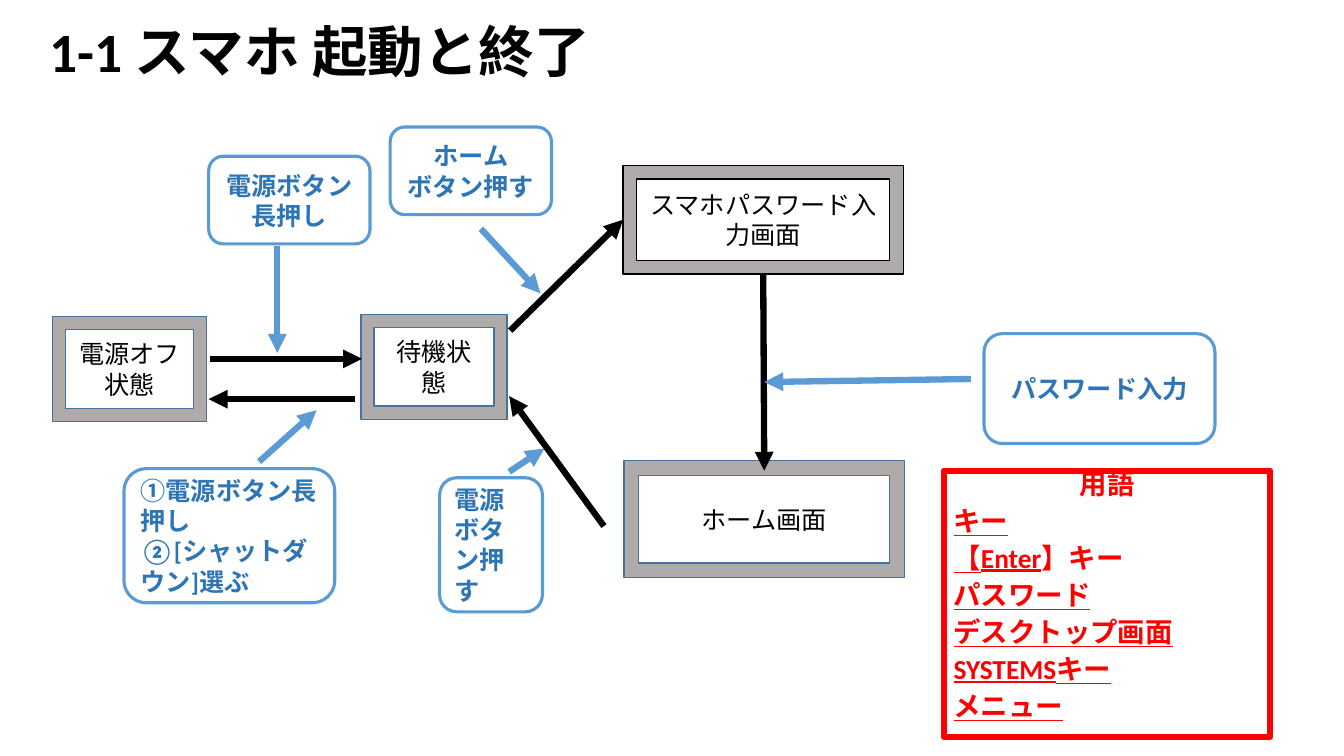
from lxml import etree
from pptx import Presentation
from pptx import util as u
from pptx.dml.color import RGBColor
from pptx.enum import shapes, text
from pptx.oxml.ns import qn

COLORS = {"black": "000000", "white": "FFFFFF", "gray": "AFABAB", "navy": "43739E",
          "blue": "5B9BD5", "label": "2E75B6", "red": "FF0000"}
FONT = "Calibri"
CENTER, LEFT = text.PP_ALIGN.CENTER, text.PP_ALIGN.LEFT
MIDDLE, TOP = text.MSO_ANCHOR.MIDDLE, text.MSO_ANCHOR.TOP
SHAPE = shapes.MSO_SHAPE

TERMS = [[("用語", False)],
         [("キー", True)],
         [("【Enter", True), ("】キー", False)],
         [("パスワード", True)],
         [("デスクトップ画面", True)],
         [("SYSTEMSキー", True)],
         [("メニュー", True)]]


def rgb(name):
    """Return the named colour."""
    return RGBColor.from_string(COLORS[name])


def style_paragraph(p, size, color, bold, align=LEFT):
    """Set the font and alignment of a paragraph."""
    p.alignment = align
    p.font.name, p.font.size, p.font.bold = FONT, u.Pt(size), bold
    p.font.color.rgb = rgb(color)


def add_box(s, kind, at, fill, line, width, anchor=MIDDLE):
    """Add an outlined shape and return it."""
    sp = s.shapes.add_shape(kind, *map(u.Inches, at))
    sp.shadow.inherit = False
    if fill:
        sp.fill.solid()
        sp.fill.fore_color.rgb = rgb(fill)
    else:
        sp.fill.background()
    sp.line.color.rgb = rgb(line)
    sp.line.width = u.Pt(width)
    sp.text_frame.word_wrap = True
    sp.text_frame.vertical_anchor = anchor
    return sp


def write_lines(sp, lines, color, bold, align):
    """Write 18 pt lines into a shape, one paragraph each."""
    tf = sp.text_frame
    for i, line in enumerate(lines):
        p = tf.add_paragraph() if i else tf.paragraphs[0]
        p.text = line
        style_paragraph(p, 18, color, bold, align)


def add_state(s, at, name, line="navy"):
    """Add a framed phone state."""
    sp = add_box(s, SHAPE.FRAME, at, "gray", line, 1)
    write_lines(sp, [name], "black", False, CENTER)
    return sp


def add_action(s, at, lines, align=CENTER):
    """Add a rounded label for a user action."""
    sp = add_box(s, SHAPE.ROUNDED_RECTANGLE, at, "white", "blue", 2.25)
    write_lines(sp, lines, "label", True, align)


def add_arrow(s, start, end, color):
    """Add a thick arrow between two points."""
    arrow = s.shapes.add_connector(shapes.MSO_CONNECTOR.STRAIGHT,
                                   *map(u.Inches, start + end))
    arrow.line.color.rgb = rgb(color)
    arrow.line.width = u.Pt(4.5)
    etree.SubElement(arrow.line._get_or_add_ln(), qn("a:tailEnd"), type="triangle")
    etree.SubElement(arrow._element.spPr, qn("a:effectLst"))
    return arrow


def add_title(s, title):
    """Add the slide title."""
    sp = s.shapes.add_textbox(*map(u.Inches, (0.39, 0.27, 7.27, 0.55)))
    tf = sp.text_frame
    tf.word_wrap = True
    tf.vertical_anchor = MIDDLE
    p = tf.paragraphs[0]
    p.text = title
    p.line_spacing = 0.9
    style_paragraph(p, 39.6, "black", True)


def add_terms(s, at):
    """Add the red box of terms."""
    tf = add_box(s, SHAPE.RECTANGLE, at, None, "red", 4.5, TOP).text_frame
    for i, runs in enumerate(TERMS):
        p = tf.add_paragraph() if i else tf.paragraphs[0]
        p.line_spacing = 0.7
        if i:
            p.space_before = u.Pt(10)
        for words, underlined in runs:
            r = p.add_run()
            r.text = words
            r.font.underline = underlined
        style_paragraph(p, 19.6, "red", True, LEFT if i else CENTER)


def main():
    """Build the slide and save it."""
    prs = Presentation()
    prs.slide_width, prs.slide_height = u.Inches(13.33), u.Inches(7.5)
    s = prs.slides.add_slide(prs.slide_layouts[6])

    add_title(s, "1-1 スマホ 起動と終了")
    add_terms(s, (9.36, 4.67, 3.24, 2.64))

    password = add_state(s, (6.18, 1.64, 2.78, 1.08), "スマホパスワード入力画面", "black")
    add_state(s, (6.19, 4.57, 2.78, 1.16), "ホーム画面")
    add_state(s, (0.52, 3.14, 1.53, 1.04), "電源オフ状態")
    add_state(s, (3.58, 3.12, 1.45, 1.04), "待機状態")

    to_home = add_arrow(s, (7.57, 2.72), (7.58, 4.67), "black")
    to_home.begin_connect(password, 2)
    to_password = add_arrow(s, (5.06, 3.28), (6.2, 2.23), "black")
    to_password.end_connect(password, 1)
    for start, end in [((5.99, 5.22), (5.05, 3.93)),
                       ((2.08, 3.56), (3.59, 3.56)),
                       ((3.52, 3.96), (2.07, 3.96))]:
        add_arrow(s, start, end, "black")
    for start, end in [((9.63, 3.76), (7.58, 3.79)),
                       ((2.75, 2.44), (2.75, 3.5)),
                       ((2.57, 4.58), (3.14, 4.07)),
                       ((5.05, 4.68), (5.4, 4.45)),
                       ((4.77, 2.27), (5.36, 2.91))]:
        add_arrow(s, start, end, "blue")

    add_action(s, (9.76, 3.31, 2.29, 1.09), ["パスワード入力"])
    add_action(s, (2.07, 1.55, 1.6, 0.87), ["電源ボタン長押し"])
    add_action(s, (3.87, 1.26, 1.6, 0.87), ["ホーム", "ボタン押す"])
    add_action(s, (1.23, 4.65, 2.09, 1.33),
               ["①電源ボタン長押し", "②[シャットダウン]選ぶ"], LEFT)
    add_action(s, (4.36, 4.74, 1.02, 1.33), ["電源ボタン押す"], LEFT)

    prs.save("out.pptx")


if __name__ == "__main__":
    main()
